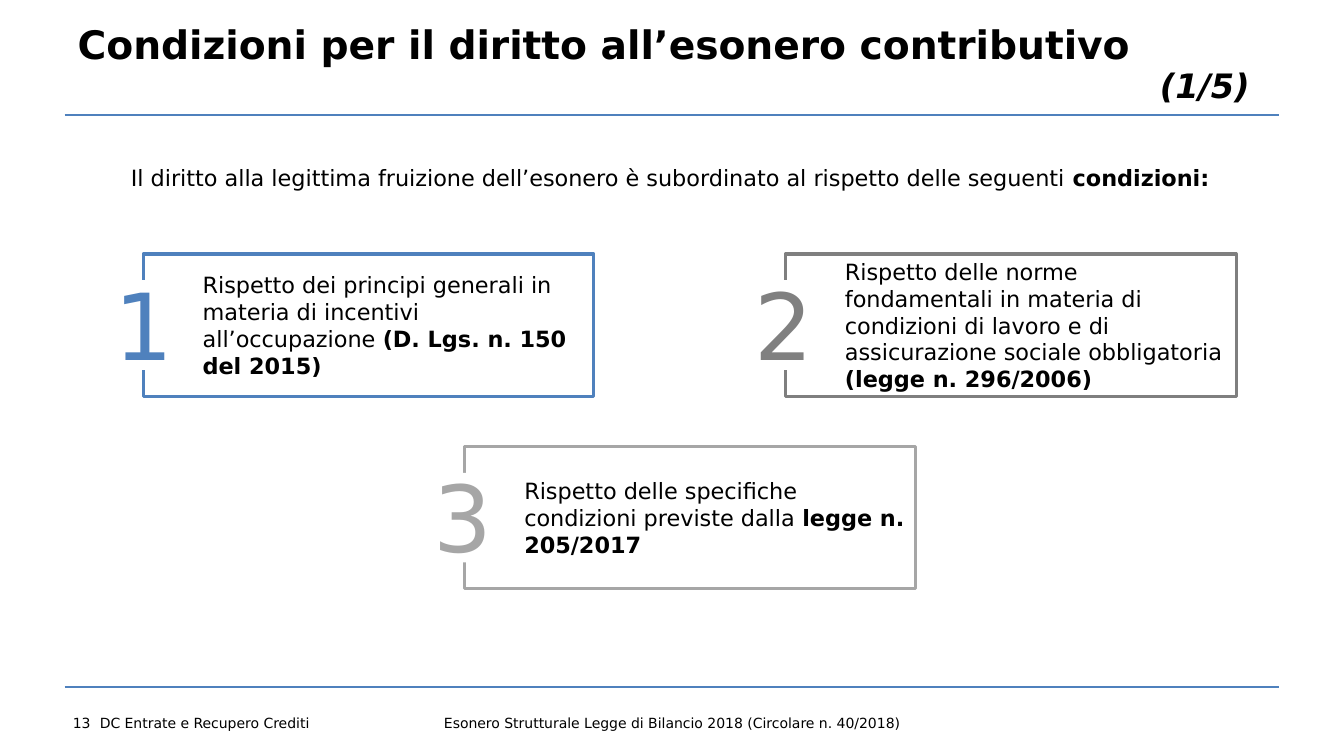
"""Build the slide on the conditions for the contribution exemption."""
from dataclasses import dataclass
from typing import Any

import pptx
import pptx.dml.color
import pptx.enum.shapes
import pptx.enum.text
import pptx.oxml
import pptx.util

Inches = pptx.util.Inches
RGBColor = pptx.dml.color.RGBColor
Align = pptx.enum.text.PP_ALIGN
Anchor = pptx.enum.text.MSO_ANCHOR

BLACK = RGBColor(0x00, 0x00, 0x00)
WHITE = RGBColor(0xFF, 0xFF, 0xFF)
BLUE = RGBColor(0x4F, 0x81, 0xBD)
DARK_GREY = RGBColor(0x7F, 0x7F, 0x7F)
MID_GREY = RGBColor(0x80, 0x80, 0x80)
LIGHT_GREY = RGBColor(0xA6, 0xA6, 0xA6)

DEFAULT_INSETS = (0.1, 0.05, 0.1, 0.05)
SMALL_INSETS = (0.04, 0.04, 0.04, 0.04)
FRAME_INSETS = (0.59, 0.04, 0.08, 0.04)
NUMBER_INSETS = (0.12, 0, 0, 0.04)


@dataclass(frozen=True)
class Span:
    text: str
    size: float
    bold: bool = False
    italic: bool = False
    color: RGBColor = BLACK


@dataclass(frozen=True)
class Label:
    place: tuple[float, float, float, float]
    spans: tuple[Span, ...]
    align: Any = Align.LEFT
    anchor: Any = Anchor.MIDDLE
    insets: tuple[float, float, float, float] = SMALL_INSETS
    spacing: float = 1.0


@dataclass(frozen=True)
class Condition:
    number: str
    left: float
    top: float
    number_left: float
    frame_color: RGBColor
    number_color: RGBColor
    text: str
    law: str


TITLE = Label(
    (0.67, 0.22, 12.01, 0.92),
    (Span("Condizioni per il diritto all’esonero contributivo", 28, bold=True),),
    anchor=Anchor.TOP, insets=DEFAULT_INSETS, spacing=0.85,
)
LABELS = (
    Label((0.67, 6.99, 0.28, 0.36), (Span("13", 10),), Align.CENTER, insets=(0, 0, 0, 0)),
    Label((0.95, 7.05, 3.07, 0.24), (Span("DC Entrate e Recupero Crediti", 10),)),
    Label(
        (4.3, 7.05, 4.73, 0.24),
        (Span("Esonero Strutturale Legge di Bilancio 2018 (Circolare n. 40/2018)", 10),),
        Align.CENTER,
    ),
    Label(
        (0.68, 1.57, 12.01, 0.39),
        (
            Span("Il diritto alla legittima fruizione dell’esonero è subordinato "
                 "al rispetto delle seguenti ", 16),
            Span("condizioni: ", 16, bold=True),
        ),
        Align.CENTER,
    ),
    Label(
        (11.26, 0.66, 1.38, 0.39), (Span("(1/5)", 24, bold=True, italic=True),),
        Align.CENTER, Anchor.TOP, DEFAULT_INSETS, 0.85,
    ),
)
CONDITIONS = (
    Condition("1", 1.42, 2.52, 1.02, BLUE, BLUE,
              "Rispetto dei principi generali in materia di incentivi all’occupazione ",
              "(D. Lgs. n. 150 del 2015)"),
    Condition("2", 7.79, 2.52, 7.36, DARK_GREY, MID_GREY,
              "Rispetto delle norme fondamentali in materia di condizioni di lavoro "
              "e di assicurazione sociale obbligatoria ",
              "(legge n. 296/2006)"),
    Condition("3", 4.61, 4.43, 4.18, LIGHT_GREY, LIGHT_GREY,
              "Rispetto delle specifiche condizioni previste dalla ",
              "legge n. 205/2017"),
)


def apply(target: Any, values: dict[str, Any]) -> None:
    for name, value in values.items():
        setattr(target, name, value)


def write(box: Any, label: Label) -> None:
    frame = box.text_frame
    left, top, right, bottom = map(Inches, label.insets)
    apply(frame, {
        "word_wrap": True, "auto_size": pptx.enum.text.MSO_AUTO_SIZE.NONE,
        "vertical_anchor": label.anchor, "margin_left": left, "margin_top": top,
        "margin_right": right, "margin_bottom": bottom,
    })
    para = frame.paragraphs[0]
    apply(para, {"alignment": label.align, "line_spacing": label.spacing})
    for span in label.spans:
        run = para.add_run()
        run.text = span.text
        apply(run.font, {
            "name": "DejaVu Sans", "size": pptx.util.Pt(span.size),
            "bold": span.bold, "italic": span.italic,
        })
        run.font.color.rgb = span.color


def add_title(page: Any) -> None:
    title = page.shapes.title
    apply(title, dict(zip(("left", "top", "width", "height"), map(Inches, TITLE.place))))
    write(title, TITLE)


def add_rule(page: Any, top: float) -> None:
    rule = page.shapes.add_connector(
        pptx.enum.shapes.MSO_CONNECTOR.STRAIGHT,
        Inches(0.64), Inches(top), Inches(12.69), Inches(top),
    )
    rule.line.color.rgb = BLUE
    rule.line.width = pptx.util.Pt(1.5)
    properties = rule._element.spPr
    properties.append(properties.makeelement(pptx.oxml.ns.qn("a:effectLst"), {}))


def add_rectangle(group: Any, label: Label) -> Any:
    box = group.shapes.add_shape(
        pptx.enum.shapes.MSO_SHAPE.RECTANGLE, *map(Inches, label.place))
    box.shadow.inherit = False
    write(box, label)
    return box


def add_condition(page: Any, item: Condition) -> None:
    group = page.shapes.add_group_shape()
    frame = add_rectangle(group, Label(
        (item.left, item.top, 4.47, 1.41),
        (Span(item.text, 16), Span(item.law, 16, bold=True)),
        insets=FRAME_INSETS,
    ))
    frame.fill.background()
    frame.line.color.rgb = item.frame_color
    frame.line.width = pptx.util.Pt(2.25)
    number = add_rectangle(group, Label(
        (item.number_left, item.top + 0.26, 0.86, 0.89),
        (Span(item.number, 66, color=item.number_color),),
        insets=NUMBER_INSETS,
    ))
    number.fill.solid()
    number.fill.fore_color.rgb = WHITE
    number.line.fill.background()


def main() -> None:
    deck = pptx.Presentation()
    apply(deck, {"slide_width": Inches(13.33), "slide_height": Inches(7.5)})
    page = deck.slides.add_slide(deck.slide_layouts[5])
    for top in (6.82, 1.14):
        add_rule(page, top)
    add_title(page)
    for item in CONDITIONS:
        add_condition(page, item)
    for label in LABELS:
        write(page.shapes.add_textbox(*map(Inches, label.place)), label)
    deck.save("out.pptx")


if __name__ == "__main__":
    main()
